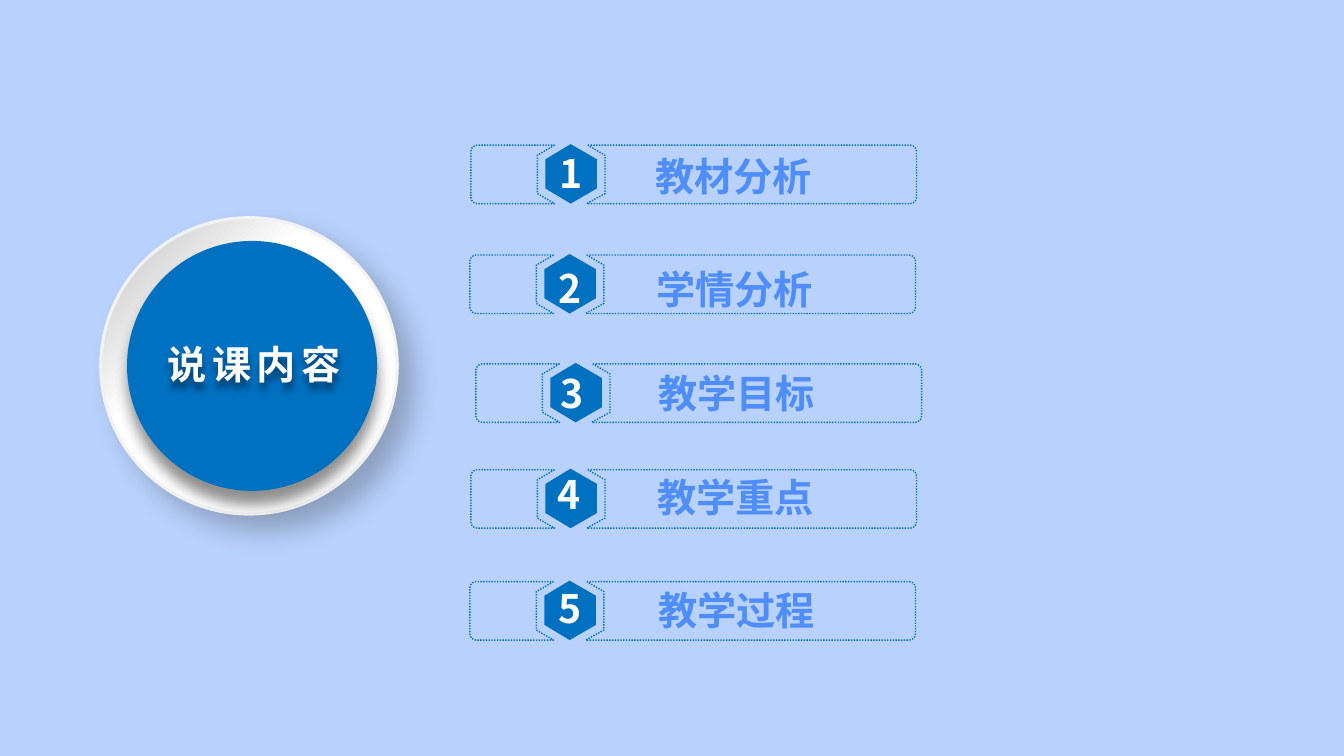
"""Build the lesson contents slide: a round title badge beside five numbered topics."""
import math
from dataclasses import dataclass

from lxml import etree
from pptx import Presentation, util as u
from pptx.dml.color import RGBColor
from pptx.enum import dml, shapes, text
from pptx.oxml import ns

PX = 9144
BACKDROP = RGBColor(0xB9, 0xD2, 0xFD)
BLUE = RGBColor(0x00, 0x70, 0xC0)
TOPIC_BLUE = RGBColor(0x4F, 0x8E, 0xFA)
WHITE = RGBColor(0xFF, 0xFF, 0xFF)
RIM = RGBColor(0xF2, 0xF2, 0xF2)
GREY = RGBColor(0xBF, 0xBF, 0xBF)
CJK = "Noto Sans CJK SC"
HEXAGON = [(25, 0), (51, 15), (51, 44), (25, 59), (0, 44), (0, 15)]
CORNER = 6


@dataclass(frozen=True)
class Topic:
    """A numbered topic with the corners of its hexagon, number and label."""
    name: str
    hexagon: tuple[int, int]
    number: tuple[int, int]
    label: tuple[int, int]


@dataclass(frozen=True)
class Shadow:
    """An outer shadow: opacity in percent, lengths in points, angle in degrees."""
    opacity: int
    blur: int
    distance: int
    angle: int


TOPICS = [
    Topic("教材分析", (541, 143), (545, 143), (640, 146)),
    Topic("学情分析", (540, 252), (544, 257), (641, 258)),
    Topic("教学目标", (546, 360), (546, 361), (643, 361)),
    Topic("教学重点", (541, 465), (543, 462), (642, 465)),
    Topic("教学过程", (540, 576), (544, 575), (643, 577)),
]


def corner(x: int, y: int, start: int) -> list[tuple[int, int]]:
    """Return a clockwise quarter arc around x, y from the start angle."""
    angles = [math.radians(start + step) for step in (0, 30, 60, 90)]
    return [(round(x + CORNER * math.cos(a)), round(y + CORNER * math.sin(a))) for a in angles]


FRAME_LEFT = [(83, 0), (66, 10), (66, 48), (83, 58), *corner(6, 52, 90), *corner(6, 6, 180)]
FRAME_RIGHT = [(116, 0), *corner(436, 6, 270), *corner(436, 52, 0),
               (115, 58), (133, 48), (133, 10)]


def draw_outline(canvas, left: int, top: int, *contours: list[tuple[int, int]]):
    """Draw closed contours as one freeform placed at left, top."""
    placed = [[(left + x, top + y) for x, y in contour] for contour in contours]
    builder = canvas.build_freeform(*placed[0][0], scale=PX)
    builder.add_line_segments(placed[0][1:])
    for contour in placed[1:]:
        builder.move_to(*contour[0])
        builder.add_line_segments(contour[1:])
    outline = builder.convert_to_shape()
    outline.shadow.inherit = False
    return outline


def write(frame, words: str, color: RGBColor, font: str = CJK):
    """Write one bold 28 pt run and return it."""
    frame.auto_size = text.MSO_AUTO_SIZE.SHAPE_TO_FIT_TEXT
    paragraph = frame.paragraphs[0]
    paragraph.alignment = text.PP_ALIGN.LEFT
    run = paragraph.add_run()
    run.text = words
    run.font.size, run.font.bold, run.font.name = u.Pt(28), True, font
    run.font.color.rgb = color
    etree.SubElement(run.font._element, ns.qn("a:ea"), typeface=CJK)
    return run


def add_words(canvas, place: tuple[int, int], width: int, words: str, color: RGBColor) -> None:
    """Add a wrapped text box at a place."""
    box = canvas.add_textbox(place[0] * PX, place[1] * PX, width * PX, 57 * PX)
    box.text_frame.word_wrap = True
    write(box.text_frame, words, color)


def cast_shadow(shape, shadow: Shadow) -> None:
    """Give a shape a soft black outer shadow."""
    shape.shadow.inherit = False
    effects = shape.element.spPr.find(ns.qn("a:effectLst"))
    outer = etree.SubElement(
        effects, ns.qn("a:outerShdw"), blurRad=str(u.Pt(shadow.blur)),
        dist=str(u.Pt(shadow.distance)), dir=str(shadow.angle * 60000),
        algn="ctr", rotWithShape="0")
    black = etree.SubElement(outer, ns.qn("a:srgbClr"), val="000000")
    etree.SubElement(black, ns.qn("a:alpha"), val=str(shadow.opacity * 1000))


def draw_topic(slide, number: int, topic: Topic) -> None:
    """Draw the dotted frame, hexagon, number and label of a topic."""
    row = slide.shapes.add_group_shape().shapes
    left, top = topic.hexagon
    frame = draw_outline(row, left - 74, top + 1, FRAME_LEFT, FRAME_RIGHT)
    frame.fill.background()
    frame.line.color.rgb = BLUE
    frame.line.width = u.Pt(1)
    frame.line.dash_style = dml.MSO_LINE.ROUND_DOT
    hexagon = draw_outline(row, left, top, HEXAGON)
    hexagon.fill.solid()
    hexagon.fill.fore_color.rgb = BLUE
    hexagon.line.fill.background()
    add_words(row, topic.number, 77, str(number), WHITE)
    add_words(slide.shapes, topic.label, 235, topic.name, TOPIC_BLUE)


def draw_disc(slide, left: int, top: int, size: int, shadow: Shadow):
    """Add a circle with a shadow."""
    disc = slide.shapes.add_shape(
        shapes.MSO_SHAPE.OVAL, left * PX, top * PX, size * PX, size * PX)
    cast_shadow(disc, shadow)
    return disc


def draw_badge(slide) -> None:
    """Draw the white ring, the blue disc and the title on top."""
    ring = draw_disc(slide, 100, 216, 294, Shadow(23, 20, 15, 45))
    ring.fill.gradient()
    ring.fill.gradient_angle = 315
    for stop, color, position in zip(ring.fill.gradient_stops, (GREY, WHITE), (0, 0.37)):
        stop.color.rgb, stop.position = color, position
    ring.line.color.rgb = RIM
    ring.line.width = u.Pt(2.25)

    disc = draw_disc(slide, 126, 239, 248, Shadow(43, 10, 10, 90))
    disc.fill.solid()
    disc.fill.fore_color.rgb = BLUE
    disc.line.fill.background()

    title = slide.shapes.title
    title.left, title.top, title.width, title.height = (v * PX for v in (156, 333, 200, 57))
    title.text_frame.word_wrap = False
    title.text_frame.vertical_anchor = text.MSO_ANCHOR.TOP
    run = write(title.text_frame, "说课内容", WHITE, "Arial")
    run.font._element.set("spc", "400")
    cast_shadow(title, Shadow(43, 5, 5, 90))
    slide.shapes.element.append(title.element)


def main() -> None:
    """Build and save the slide."""
    deck = Presentation()
    deck.slide_width, deck.slide_height = 1333 * PX, 750 * PX
    slide = deck.slides.add_slide(deck.slide_layouts.get_by_name("Title Only"))
    slide.background.fill.solid()
    slide.background.fill.fore_color.rgb = BACKDROP
    for number, topic in enumerate(TOPICS, 1):
        draw_topic(slide, number, topic)
    draw_badge(slide)
    deck.save("out.pptx")


if __name__ == "__main__":
    main()
